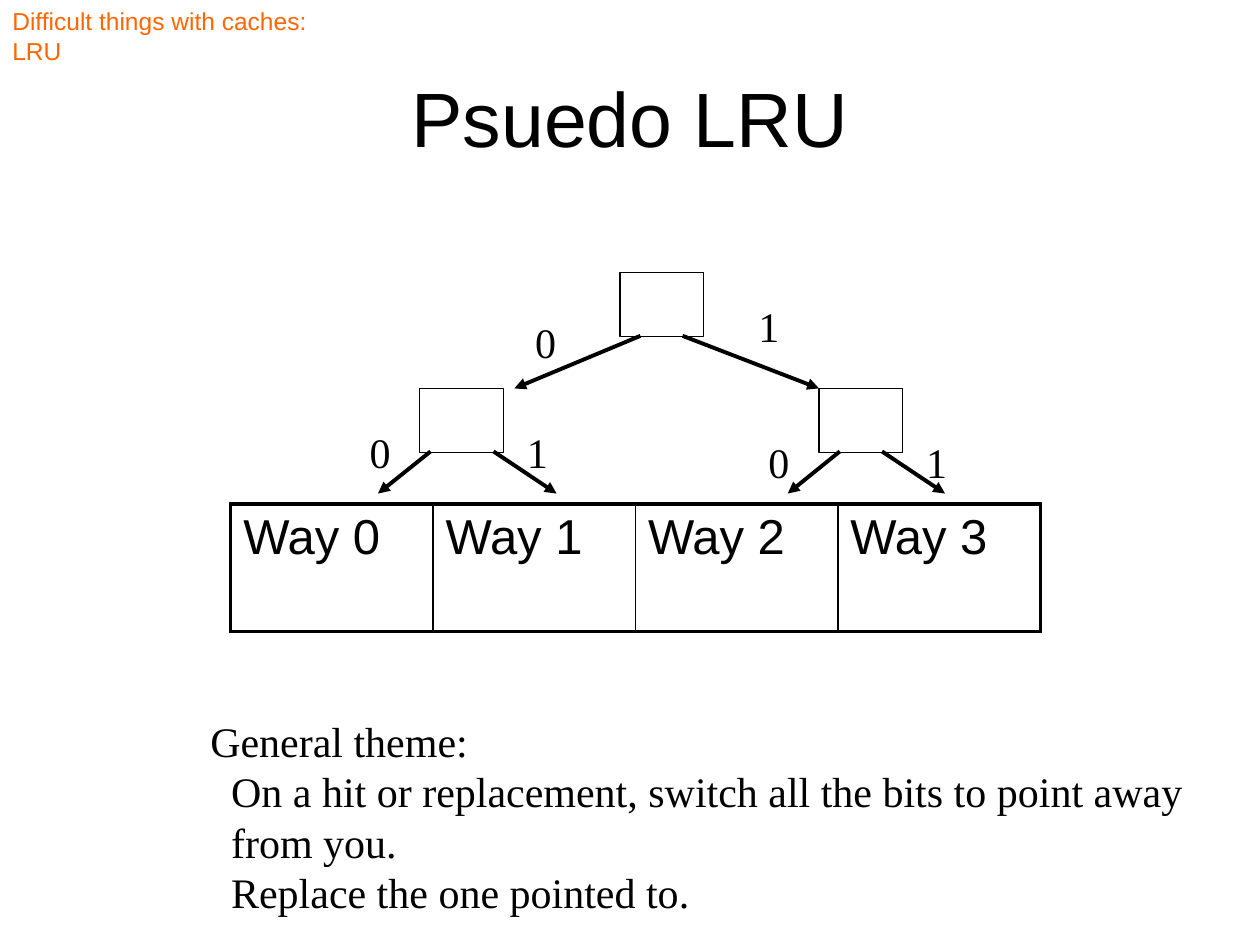
from lxml.etree import SubElement
from pptx import Presentation
from pptx.dml.color import RGBColor
from pptx.enum.shapes import MSO_CONNECTOR, MSO_SHAPE
from pptx.enum.text import MSO_ANCHOR, PP_ALIGN
from pptx.oxml.ns import qn
from pptx.util import Cm, Pt

COLORS = {"ink": "000000", "accent": "FF6600"}
INK = RGBColor.from_string(COLORS["ink"])


def write(tf, text, size=24, font="Times New Roman", color="ink",
          align=PP_ALIGN.LEFT, anchor=MSO_ANCHOR.TOP, wrap=True):
    tf.text = text
    tf.word_wrap = wrap
    tf.vertical_anchor = anchor
    for p in tf.paragraphs:
        p.alignment = align
        for r in p.runs:
            r.font.size = Pt(size)
            r.font.name = font
            r.font.color.rgb = RGBColor.from_string(COLORS[color])


def add_border(cell, side, width):
    ln = SubElement(cell._tc.get_or_add_tcPr(), qn(f"a:ln{side}"), w=str(Pt(width)))
    fill = SubElement(ln, qn("a:solidFill"))
    SubElement(fill, qn("a:srgbClr"), val=COLORS["ink"])


prs = Presentation()
prs.slide_width, prs.slide_height = Cm(25.4), Cm(19.05)
s = prs.slides.add_slide(prs.slide_layouts[6])

# Title
title = s.shapes.add_textbox(Cm(1.27), Cm(0.76), Cm(22.86), Cm(3.18))
write(title.text_frame, "Psuedo LRU", size=44, font="Arial",
      align=PP_ALIGN.CENTER, anchor=MSO_ANCHOR.MIDDLE)

# Cache ways
WAYS = 4
frame = s.shapes.add_table(1, WAYS, Cm(4.65), Cm(10.16), Cm(16.32), Cm(2.57))
table = frame.table
table.first_row = table.horz_banding = False
for i in range(WAYS):
    table.columns[i].width = Cm(4.08)
    cell = table.cell(0, i)
    write(cell.text_frame, f"Way {i}", size=28, font="Arial")
    add_border(cell, "L", 2.25 if i == 0 else 1)
    add_border(cell, "R", 2.25 if i == WAYS - 1 else 1)
    add_border(cell, "T", 2.25)
    add_border(cell, "B", 2.25)
    cell.fill.background()

# Tree nodes
for x, y in [(12.5, 5.5), (8.46, 7.83), (16.51, 7.83)]:
    node = s.shapes.add_shape(MSO_SHAPE.RECTANGLE, Cm(x), Cm(y), Cm(1.69), Cm(1.29))
    node.shadow.inherit = False
    node.fill.background()
    node.line.color.rgb = INK
    node.line.width = Pt(0.75)

# Branches: start, end, bit and the bit's position
branches = [
    ((12.91, 6.77), (10.37, 7.83), "0", (10.54, 6.25)),
    ((13.76, 6.77), (16.51, 7.83), "1", (15.04, 5.93)),
    ((8.68, 9.1), (7.62, 9.95), "0", (7.2, 8.47)),
    ((9.95, 9.1), (11.22, 9.95), "1", (10.37, 8.47)),
    ((16.93, 9.1), (15.88, 9.95), "0", (15.24, 8.68)),
    ((17.78, 9.1), (19.05, 9.95), "1", (18.42, 8.68)),
]
for (x1, y1), (x2, y2), bit, (bx, by) in branches:
    arrow = s.shapes.add_connector(MSO_CONNECTOR.STRAIGHT, Cm(x1), Cm(y1), Cm(x2), Cm(y2))
    arrow.line.color.rgb = INK
    arrow.line.width = Pt(2.25)
    SubElement(arrow.line._get_or_add_ln(), qn("a:tailEnd"), type="triangle")
    SubElement(arrow._element.spPr, qn("a:effectLst"))
    label = s.shapes.add_textbox(Cm(bx), Cm(by), Cm(0.94), Cm(1.27))
    write(label.text_frame, bit, wrap=False)

# Policy
theme = s.shapes.add_textbox(Cm(3.99), Cm(14.3), Cm(20.29), Cm(4.32))
write(theme.text_frame,
      "General theme:\n"
      "On a hit or replacement, switch all the bits to point away\n"
      "from you.\n"
      "Replace the one pointed to.", wrap=False)
for p in theme.text_frame.paragraphs[1:]:
    pPr = p._p.get_or_add_pPr()
    pPr.set("marL", str(Cm(0.42)))
    pPr.set("indent", "0")

# Section heading
section = s.shapes.add_textbox(Cm(0), Cm(0), Cm(6.99), Cm(1.45))
write(section.text_frame, "Difficult things with caches: \vLRU",
      size=14, font="Arial", color="accent")

prs.save("out.pptx")
